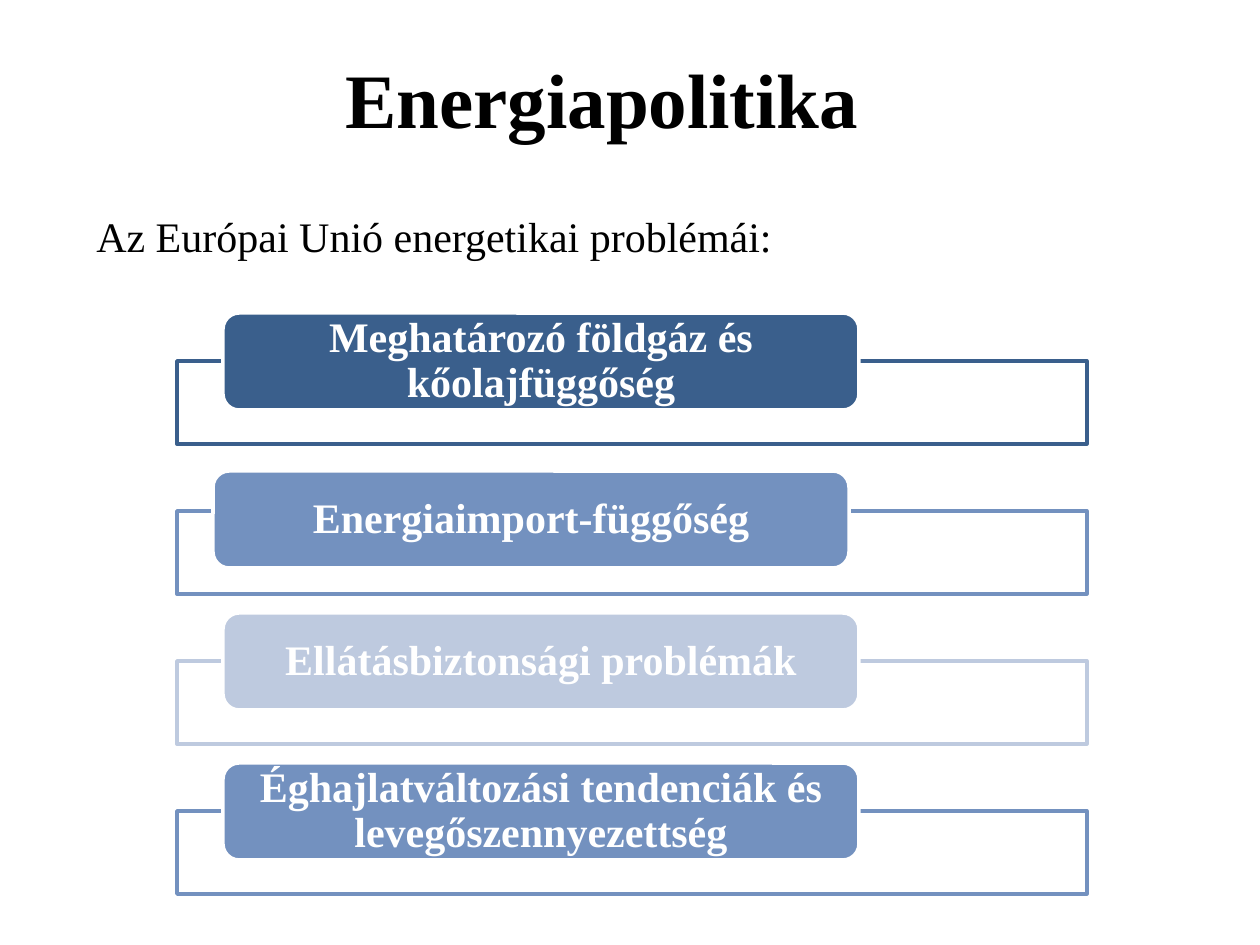
from dataclasses import dataclass

from lxml import etree
from pptx import Presentation
from pptx.dml.color import RGBColor
from pptx.enum.shapes import MSO_SHAPE
from pptx.enum.text import MSO_ANCHOR, PP_ALIGN
from pptx.oxml.ns import qn
from pptx.util import Pt

EMU_PER_PX = 914400 / 126
RECTANGLE, ROUNDED = MSO_SHAPE.RECTANGLE, MSO_SHAPE.ROUNDED_RECTANGLE
LEFT, CENTER, JUSTIFY = PP_ALIGN.LEFT, PP_ALIGN.CENTER, PP_ALIGN.JUSTIFY
MIDDLE = MSO_ANCHOR.MIDDLE


@dataclass(frozen=True)
class Theme:
    font: str = "Times New Roman"
    black: str = "000000"
    white: str = "FFFFFF"
    dark_blue: str = "3A5F8C"
    mid_blue: str = "7391BF"
    pale_blue: str = "BECADF"
    title_size: int = 44
    body_size: int = 24
    line_width: int = 2
    frame_opacity: int = 90


def px(length):
    return round(length * EMU_PER_PX)


def set_attributes(target, values):
    for name, value in values.items():
        setattr(target, name, value)


class SlideBuilder:
    def __init__(self, slide, theme):
        self.slide = slide
        self.theme = theme

    def fill_text(self, shape, text, size, color, bold=False, **paragraph_format):
        paragraph = shape.text_frame.paragraphs[0]
        set_attributes(paragraph, paragraph_format)
        run = paragraph.add_run()
        run.text = text
        set_attributes(run.font, {"name": self.theme.font, "size": Pt(size), "bold": bold})
        run.font.color.rgb = RGBColor.from_string(color)

    def text(self, box, text, size, **text_format):
        shape = self.slide.shapes.add_textbox(*map(px, box))
        shape.text_frame.word_wrap = True
        self.fill_text(shape, text, size, self.theme.black, **text_format)

    def panel(self, kind, box, fill, line):
        shape = self.slide.shapes.add_shape(kind, *map(px, box))
        shape.shadow.inherit = False
        shape.fill.solid()
        shape.fill.fore_color.rgb = RGBColor.from_string(fill)
        shape.line.color.rgb = RGBColor.from_string(line)
        shape.line.width = Pt(self.theme.line_width)
        return shape

    def frame(self, box, line):
        """Add a nearly opaque white rectangle with a coloured outline."""
        shape = self.panel(RECTANGLE, box, self.theme.white, line)
        color = shape.element.spPr.find(qn("a:solidFill"))[0]
        etree.SubElement(color, qn("a:alpha"), val=str(self.theme.frame_opacity * 1000))

    def label(self, box, text, fill):
        shape = self.panel(ROUNDED, box, fill, self.theme.white)
        set_attributes(shape.text_frame, {
            "word_wrap": True, "vertical_anchor": MIDDLE,
            "margin_left": px(24), "margin_right": px(24),
            "margin_top": 0, "margin_bottom": 0,
        })
        self.fill_text(shape, text, self.theme.body_size, self.theme.white,
                       bold=True, alignment=CENTER, line_spacing=0.9)


def main():
    theme = Theme()
    presentation = Presentation()
    set_attributes(presentation, {"slide_width": px(1260), "slide_height": px(945)})
    slide = presentation.slides.add_slide(presentation.slide_layouts[6])
    builder = SlideBuilder(slide, theme)

    builder.text((333, 45, 753, 106), "Energiapolitika", theme.title_size,
                 bold=True, alignment=LEFT)
    builder.text((84, 204, 1131, 63), "Az Európai Unió energetikai problémái:",
                 theme.body_size, alignment=JUSTIFY)

    # Each problem: text, colour, and the shift of its label from the grid
    problems = [
        ("Meghatározó földgáz és kőolajfüggőség", theme.dark_blue, (0, 0)),
        ("Energiaimport-függőség", theme.mid_blue, (-10, 8)),
        ("Ellátásbiztonsági problémák", theme.pale_blue, (0, 0)),
        ("Éghajlatváltozási tendenciák és levegőszennyezettség", theme.mid_blue, (0, 0)),
    ]
    row_pitch = 150
    for row, (text, color, (shift_x, shift_y)) in enumerate(problems):
        offset = row * row_pitch
        builder.frame((177, 361 + offset, 910, 83), color)
        builder.label((223 + shift_x, 313 + offset + shift_y, 636, 97), text, color)

    presentation.save("out.pptx")


if __name__ == "__main__":
    main()
